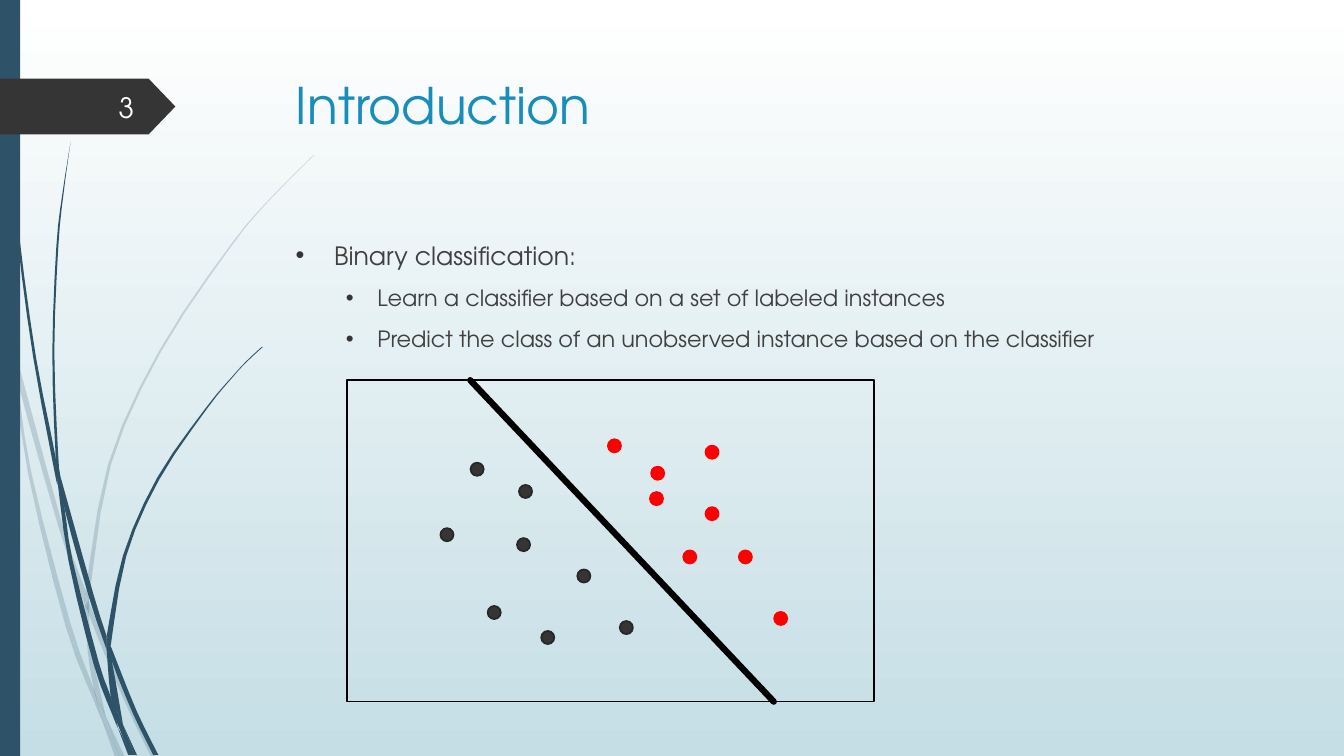
from lxml.etree import SubElement
from pptx import Presentation
from pptx.dml.color import RGBColor
from pptx.enum.shapes import MSO_CONNECTOR, MSO_SHAPE
from pptx.enum.text import MSO_ANCHOR, PP_ALIGN
from pptx.oxml.ns import qn
from pptx.util import Cm, Pt

FONT = "TeX Gyre Adventor"
COLORS = {
    "top": "FFFFFF", "bottom": "C5DEE5", "navy": "2E5369",
    "dark": "353535", "rim": "272727", "red": "FF0000", "black": "000000",
    "title": "178DBB", "body": "404040", "page": "FEFFFF",
}

# Each piece of grass has a left and a right edge, both run downwards in cm.
PALE = [
    ([(0, 7.16), (0.23, 8.18), (0.28, 8.89)],
     [(0, 7.59), (0.25, 8.74), (0.28, 8.89)]),
    ([(0.36, 8.76), (0.43, 9.55), (1.47, 13.26), (2.13, 15.21)],
     [(0.36, 8.76), (1.57, 13.21), (2.16, 14.88)]),
    ([(2.24, 15.14), (2.24, 15.49), (3.12, 17.63), (3.81, 19.08)],
     [(2.24, 15.14), (2.34, 15.42), (3.23, 17.58), (3.94, 19.08)]),
    ([(2.67, 18.06), (3.02, 19.08)], [(2.67, 18.06), (3.15, 19.08)]),
    ([(0.28, 8.89), (0.71, 11.94), (1.65, 15.77), (2.34, 17.6), (2.57, 18.14)],
     [(0.28, 8.89), (0.43, 9.55), (0.79, 11.91), (1.78, 15.72), (2.36, 17.35),
      (2.51, 17.96), (2.57, 18.14)]),
    ([(2.13, 15.21), (2.21, 16.41), (2.36, 17.35), (2.44, 17.58), (2.67, 18.06)],
     [(2.13, 15.21), (2.24, 15.44), (2.31, 16.41), (2.67, 18.06)]),
    ([(7.92, 3.89), (6.81, 5), (5.79, 6.2), (4.01, 8.84), (2.72, 11.71),
      (2.16, 14.88)],
     [(7.92, 3.91), (6.81, 5.03), (5.82, 6.22), (4.06, 8.86), (2.79, 11.73),
      (2.24, 15.14)]),
    ([(2.57, 18.14), (2.9, 19.08)], [(2.57, 18.14), (3.02, 19.08)]),
    ([(2.16, 14.88), (2.13, 15.21), (2.24, 15.44)],
     [(2.16, 14.88), (2.24, 15.14), (2.24, 15.49)]),
    ([(2.36, 17.35), (2.51, 17.96), (2.57, 18.14), (3.02, 19.08)],
     [(2.36, 17.35), (2.44, 17.58), (2.67, 18.06), (3.02, 19.08)]),
]
DEEP = [
    ([(0.08, 0), (0.1, 1.22), (0.18, 2.79), (0.43, 5.92), (0.84, 9.02),
      (1.42, 12.12)],
     [(0.1, 0), (0.13, 1.22), (0.2, 2.77), (0.48, 5.89), (0.91, 9.02),
      (1.4, 11.51), (1.45, 12.22)]),
    ([(1.52, 11.99), (1.63, 12.83), (2.24, 15.04), (2.69, 16.38)],
     [(1.52, 11.99), (2.36, 14.99), (2.69, 16.03)]),
    ([(2.79, 16.28), (2.82, 16.66), (3.35, 17.98), (3.86, 19.02)],
     [(2.79, 16.28), (2.87, 16.48), (3.45, 17.93), (3.99, 19.02)]),
    ([(1.45, 12.12), (1.73, 14.15), (2.36, 16.74), (2.82, 17.98), (2.97, 18.34)],
     [(1.45, 12.12), (1.63, 12.83), (1.83, 14.12), (2.49, 16.69), (2.79, 17.55),
      (2.95, 18.21), (2.97, 18.34)]),
    ([(1.78, 3.58), (1.57, 4.9), (1.42, 6.22), (1.32, 8.86), (1.4, 11.4),
      (1.52, 11.99)],
     [(1.78, 3.58), (1.6, 4.9), (1.47, 6.22), (1.37, 8.86), (1.47, 11.51),
      (1.52, 11.99)]),
    ([(3.1, 18.26), (3.38, 19.02)], [(3.1, 18.26), (3.45, 19.02)]),
    ([(1.4, 11.4), (1.45, 12.12), (1.63, 12.83)],
     [(1.4, 11.4), (1.52, 11.99), (1.63, 12.83)]),
    ([(6.6, 8.74), (6.22, 9.09), (5.87, 9.47), (5.18, 10.29), (3.96, 12.04),
      (3.1, 14), (2.69, 16.03)],
     [(6.63, 8.74), (6.22, 9.12), (5.87, 9.5), (5.21, 10.31), (4.01, 12.09),
      (3.18, 14.02), (2.79, 16.28)]),
    ([(2.97, 18.34), (3.23, 19.02)], [(2.97, 18.34), (3.33, 19.02)]),
    ([(2.69, 16.38), (2.79, 17.55), (2.95, 17.93), (3.1, 18.26)],
     [(2.69, 16.38), (2.82, 16.66), (3.1, 18.26)]),
    ([(2.69, 16.03), (2.69, 16.38), (2.82, 16.66)],
     [(2.69, 16.03), (2.79, 16.28), (2.82, 16.66)]),
    ([(2.79, 17.55), (2.95, 18.21), (3.3, 19.02)],
     [(2.79, 17.55), (2.95, 17.93), (3.1, 18.26), (3.38, 19.02)]),
]
DARK_DOTS = [(11.1, 13.31), (12.29, 15.27), (11.86, 11.66), (13.64, 15.9),
             (13.08, 12.22), (13.03, 13.56), (14.55, 14.35), (15.62, 15.65)]
RED_DOTS = [(15.32, 11.07), (16.38, 12.4), (17.22, 13.87), (18.62, 13.87),
            (19.51, 15.42), (17.78, 11.23), (16.41, 11.76), (17.78, 12.78)]
POINTS = [
    ("Binary classification:", 18, 0.97, 0.97),
    ("Learn a classifier based on a set of labeled instances", 16, 2.06, 0.79),
    ("Predict the class of an unobserved instance based on the classifier",
     16, 2.06, 0.79),
]


def color(name):
    return RGBColor.from_string(COLORS[name])


def paint(shape, fill=None, line=None):
    shape.shadow.inherit = False
    if fill:
        shape.fill.solid()
        shape.fill.fore_color.rgb = color(fill)
    else:
        shape.fill.background()
    if line:
        shape.line.color.rgb = color(line)
        shape.line.width = Pt(1.25)
    else:
        shape.line.fill.background()


def add_box(slide, kind, area, fill=None, line=None):
    shape = slide.shapes.add_shape(kind, *map(Cm, area))
    paint(shape, fill, line)
    return shape


def smooth(knots, steps=3):
    """Return the knots with Catmull-Rom steps set between them."""
    if len(knots) == 2:
        return knots
    ends = [knots[0], *knots, knots[-1]]
    curve = []
    for quad in zip(ends, ends[1:], ends[2:], ends[3:]):
        for step in range(steps):
            t = step / steps
            curve.append([
                b + t * (c - a) / 2
                + t ** 2 * (2 * a - 5 * b + 4 * c - d) / 2
                + t ** 3 * (3 * b - a - 3 * c + d) / 2
                for a, b, c, d in zip(*quad)
            ])
    return curve + [knots[-1]]


def add_blade(slide, left, right, alpha):
    edge = [(Cm(x), Cm(y)) for x, y in smooth(left) + smooth(right)[::-1]]
    form = slide.shapes.build_freeform(*edge[0])
    form.add_line_segments(edge[1:], close=True)
    blade = form.convert_to_shape()
    paint(blade, "navy")
    if alpha < 100:
        tint = blade._element.spPr.find(qn("a:solidFill"))[0]
        SubElement(tint, qn("a:alpha")).set("val", str(alpha * 1000))


def style(para, size, name):
    for run in para.runs:
        run.font.name = FONT
        run.font.size = Pt(size)
        run.font.color.rgb = color(name)


def add_label(slide, area, text, size, name):
    frame = slide.shapes.add_textbox(*map(Cm, area)).text_frame
    frame.word_wrap = True
    frame.text = text
    for para in frame.paragraphs:
        style(para, size, name)
    return frame


def add_line(slide, start, end, width):
    line = slide.shapes.add_connector(
        MSO_CONNECTOR.STRAIGHT, *map(Cm, start + end))
    line.line.color.rgb = color("black")
    line.line.width = Pt(width)
    line._element.spPr.find(qn("a:ln")).set("cap", "rnd")
    SubElement(line._element.spPr, qn("a:effectLst"))


def add_bullet(para, left, hang):
    props = para._p.get_or_add_pPr()
    props.set("marL", str(Cm(left)))
    props.set("indent", str(-Cm(hang)))
    tint = SubElement(props, qn("a:buClr"))
    SubElement(tint, qn("a:srgbClr")).set("val", COLORS["dark"])
    SubElement(props, qn("a:buFont")).set("typeface", "Arial")
    SubElement(props, qn("a:buChar")).set("char", "•")


def add_list(slide, area):
    text = "\n".join(point[0] for point in POINTS)
    frame = add_label(slide, area, text, 16, "body")
    for para, (_, size, left, hang) in zip(frame.paragraphs, POINTS):
        para.space_before = Pt(10)
        para.level = int(left > hang)
        add_bullet(para, left, hang)
        style(para, size, "body")


def set_back(slide):
    fill = slide.background.fill
    fill.gradient()
    fill.gradient_angle = 270
    for stop, name, place in zip(fill.gradient_stops, ("top", "bottom"), (0, 1)):
        stop.color.rgb = color(name)
        stop.position = place


def main():
    deck = Presentation()
    deck.slide_width, deck.slide_height = Cm(33.87), Cm(19.05)
    slide = deck.slides.add_slide(deck.slide_layouts[6])
    set_back(slide)
    for blades, alpha in ((PALE, 20), (DEEP, 100)):
        for left, right in blades:
            add_blade(slide, left, right, alpha)
    add_box(slide, MSO_SHAPE.RECTANGLE, (0, 0, 0.51, 19.05), "navy")
    tag = add_box(slide, MSO_SHAPE.PENTAGON, (0, 1.98, 4.42, 1.41), "dark")
    tag.adjustments[0] = 0.48
    add_label(slide, (7.21, 1.74, 24.77, 3.56), "Introduction", 36, "title")
    add_list(slide, (7.2, 5.92, 24.77, 10.49))
    add_box(slide, MSO_SHAPE.RECTANGLE, (8.75, 9.58, 13.28, 8.1), line="black")
    add_line(slide, (11.85, 9.58), (19.5, 17.68), 4.5)
    for dots, fill, rim in ((DARK_DOTS, "dark", "rim"), (RED_DOTS, "red", "red")):
        for x, y in dots:
            add_box(slide, MSO_SHAPE.OVAL, (x, y, 0.33, 0.33), fill, rim)
    page = add_label(slide, (1.47, 2.2, 2.16, 1.02), "3", 20, "page")
    page.vertical_anchor = MSO_ANCHOR.MIDDLE
    page.paragraphs[0].alignment = PP_ALIGN.RIGHT
    deck.save("out.pptx")


if __name__ == "__main__":
    main()
